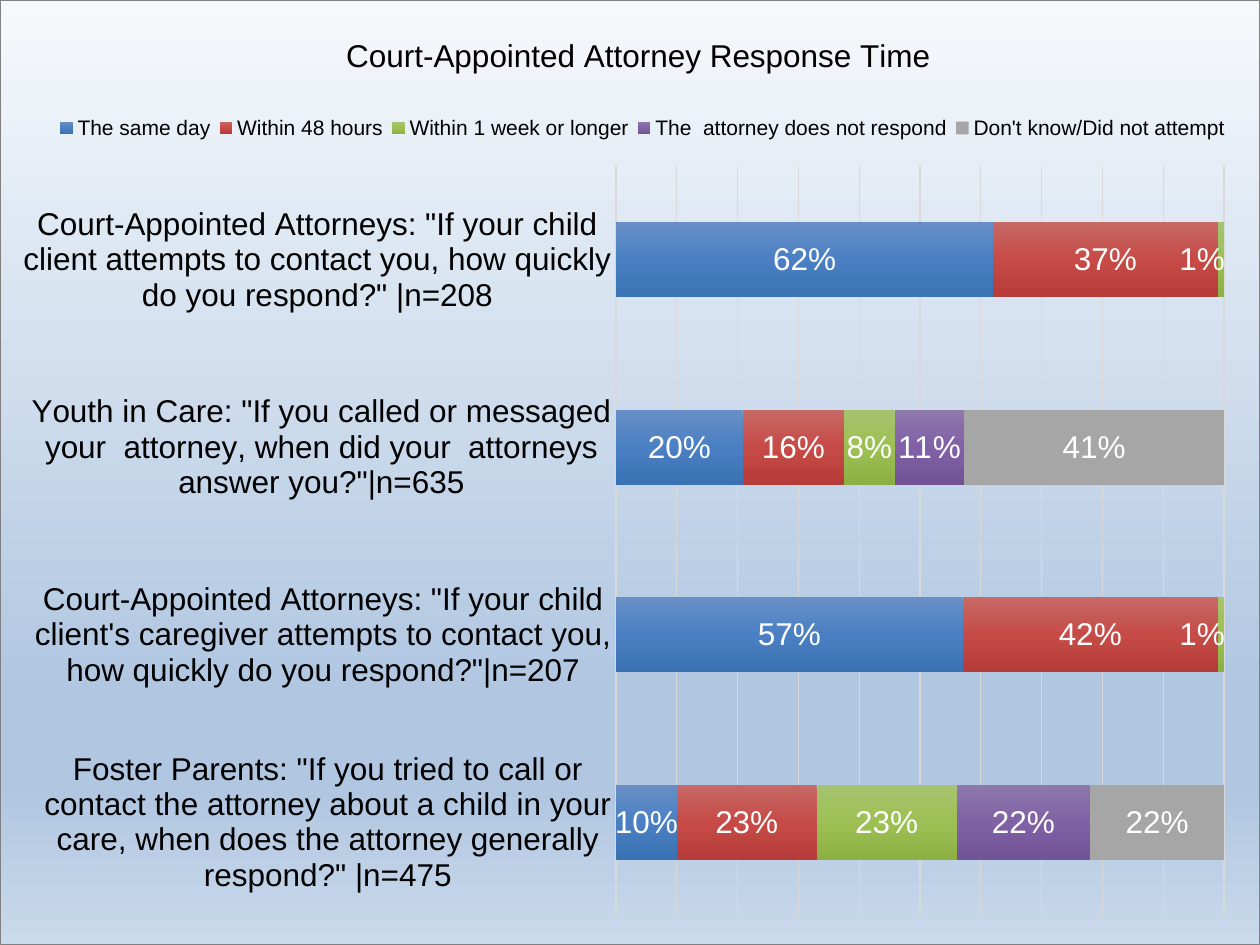
from pptx import Presentation
from pptx import util as u
from pptx.chart.data import CategoryChartData
from pptx.dml.color import RGBColor
from pptx.enum import chart as ch
from pptx.oxml import parse_xml
from pptx.oxml.ns import nsdecls, qn

BLACK = RGBColor(0x00, 0x00, 0x00)
WHITE = RGBColor(0xFF, 0xFF, 0xFF)
GRID = RGBColor(0xD9, 0xD9, 0xD9)
GRAY = RGBColor(0xA6, 0xA6, 0xA6)
BORDER = RGBColor(0x80, 0x80, 0x80)
SKY = [(0, RGBColor(0xF6, 0xF9, 0xFC)), (74, RGBColor(0xB0, 0xC6, 0xE1)),
       (83, RGBColor(0xB0, 0xC6, 0xE1)), (100, RGBColor(0xCA, 0xD9, 0xEB))]
BLUE = [(0, RGBColor(0x68, 0x8F, 0xC5)), (50, RGBColor(0x4A, 0x80, 0xC3)),
        (100, RGBColor(0x3B, 0x72, 0xB3))]
RED = [(0, RGBColor(0xC7, 0x69, 0x67)), (50, RGBColor(0xC6, 0x4B, 0x47)),
       (100, RGBColor(0xB6, 0x3C, 0x39))]
GREEN = [(0, RGBColor(0xA6, 0xC3, 0x6F)), (50, RGBColor(0x9D, 0xC0, 0x54)),
         (100, RGBColor(0x8D, 0xB0, 0x45))]
PURPLE = [(0, RGBColor(0x8E, 0x78, 0xAC)), (50, RGBColor(0x80, 0x61, 0xA5)),
          (100, RGBColor(0x71, 0x53, 0x96))]

TITLE = "Court-Appointed Attorney Response Time"
QUESTIONS = [
    'Court-Appointed Attorneys: "If your child client attempts to contact you, '
    'how quickly do you respond?" |n=208',
    'Youth in Care: "If you called or messaged your  attorney, '
    'when did your  attorneys answer you?"|n=635',
    'Court-Appointed Attorneys: "If your child client\'s caregiver attempts to '
    'contact you, how quickly do you respond?"|n=207',
    'Foster Parents: "If you tried to call or contact the attorney about a child '
    'in your care, when does the attorney generally respond?" |n=475',
]
ANSWERS = [
    ("The same day", (62, 20, 57, 10), BLUE),
    ("Within 48 hours", (37, 16, 42, 23), RED),
    ("Within 1 week or longer", (1, 8, 1, 23), GREEN),
    ("The  attorney does not respond", (0, 11, 0, 22), PURPLE),
    ("Don't know/Did not attempt", (None, 41, 0, 22), GRAY),
]
PERCENT = r"0\%;;"  # zeros get no label
NARROW_VALUE, NARROW_SHIFT = 1, -0.015


def set_font(font, size, color):
    for name, value in {"name": "Arial", "size": u.Pt(size), "bold": False}.items():
        setattr(font, name, value)
    font.color.rgb = color


def set_line(line, color, width):
    line.color.rgb = color
    line.width = u.Pt(width)


def fill_downward(fill, element, stops):
    """Fill with a top-to-bottom gradient of (percent, color) stops."""
    fill.gradient()
    fill.gradient_angle = 270
    stop_list = next(element.iter(qn("a:gsLst")))
    stop_list[:] = [
        parse_xml(f'<a:gs {nsdecls("a")} pos="{percent * 1000}">'
                  f'<a:srgbClr val="{color}"/></a:gs>')
        for percent, color in stops]


def place(parent, index, edge=True, target="", **fractions):
    """Give a chart part a manual layout as its child at index."""
    for old in parent.findall(qn("c:layout")):
        parent.remove(old)
    modes = '<c:xMode val="edge"/><c:yMode val="edge"/>' if edge else ""
    sizes = "".join(f'<c:{k} val="{v}"/>' for k, v in fractions.items())
    parent.insert(index, parse_xml(
        f'<c:layout {nsdecls("c")}><c:manualLayout>{target}{modes}{sizes}'
        "</c:manualLayout></c:layout>"))


def style_labels(series, values):
    labels = series.data_labels
    labels.show_value = True
    labels.number_format = PERCENT
    labels.number_format_is_linked = False
    labels.position = ch.XL_LABEL_POSITION.CENTER
    set_font(labels.font, 18, WHITE)
    for index, value in enumerate(values):
        if value == NARROW_VALUE:
            label = series.points[index].data_label
            set_font(label.font, 18, WHITE)
            label.position = ch.XL_LABEL_POSITION.CENTER
            element = next(e for e in series._element.iter(qn("c:dLbl"))
                           if e.find(qn("c:idx")).get("val") == str(index))
            place(element, 1, edge=False, x=NARROW_SHIFT, y=0)
            element.insert(2, parse_xml(
                f'<c:numFmt {nsdecls("c")} formatCode="{PERCENT}" sourceLinked="0"/>'))


def style_axes(chart):
    questions, percents = chart.category_axis, chart.value_axis
    questions.reverse_order = True
    questions.major_tick_mark = ch.XL_TICK_MARK.NONE
    set_font(questions.tick_labels.font, 18, BLACK)
    set_line(questions.format.line, GRID, 1)
    for name, value in {"visible": False, "has_major_gridlines": True,
                        "minimum_scale": 0, "maximum_scale": 1,
                        "major_unit": 0.1}.items():
        setattr(percents, name, value)
    set_line(percents.major_gridlines.format.line, GRID, 0.75)


def add_response_chart(page, width, height):
    data = CategoryChartData()
    data.categories = QUESTIONS
    for name, values, _ in ANSWERS:
        data.add_series(name, values)
    chart = page.shapes.add_chart(
        ch.XL_CHART_TYPE.BAR_STACKED_100, 0, 0, width, height, data).chart
    set_font(chart.font, 10, BLACK)

    chart.has_title = True
    span = chart.chart_title.text_frame.paragraphs[0].add_run()
    span.text = TITLE
    set_font(span.font, 18, BLACK)
    place(chart.chart_title._element, 1, x=0.27, y=0.03)

    chart.has_legend = True
    chart.legend.position = ch.XL_LEGEND_POSITION.TOP
    chart.legend.include_in_layout = False
    set_font(chart.legend.font, 12, BLACK)
    place(chart.legend._element, 1, x=0.04, y=0.12, w=0.94, h=0.03)

    style_axes(chart)
    plot = chart.plots[0]
    for name, value in {"gap_width": 150, "overlap": 100,
                        "vary_by_categories": False}.items():
        setattr(plot, name, value)
    for series, (_, values, color) in zip(plot.series, ANSWERS):
        if isinstance(color, list):
            fill_downward(series.format.fill, series._element, color)
        else:
            series.format.fill.solid()
            series.format.fill.fore_color.rgb = color
        style_labels(series, values)

    space = chart._chartSpace
    place(space.chart.plotArea, 0, target='<c:layoutTarget val="inner"/>',
          x=0.489, y=0.175, w=0.483, h=0.795)
    space.chart.addnext(parse_xml(
        f'<c:spPr {nsdecls("c", "a")}><a:noFill/><a:ln w="{u.Pt(0.75)}">'
        f'<a:solidFill><a:srgbClr val="{BORDER}"/></a:solidFill></a:ln></c:spPr>'))


def main():
    deck = Presentation()
    deck.slide_width, deck.slide_height = u.Pt(720), u.Pt(540)
    page = deck.slides.add_slide(deck.slide_layouts[6])
    fill_downward(page.background.fill, page.element, SKY)
    add_response_chart(page, deck.slide_width, deck.slide_height)
    deck.save("out.pptx")


if __name__ == "__main__":
    main()
